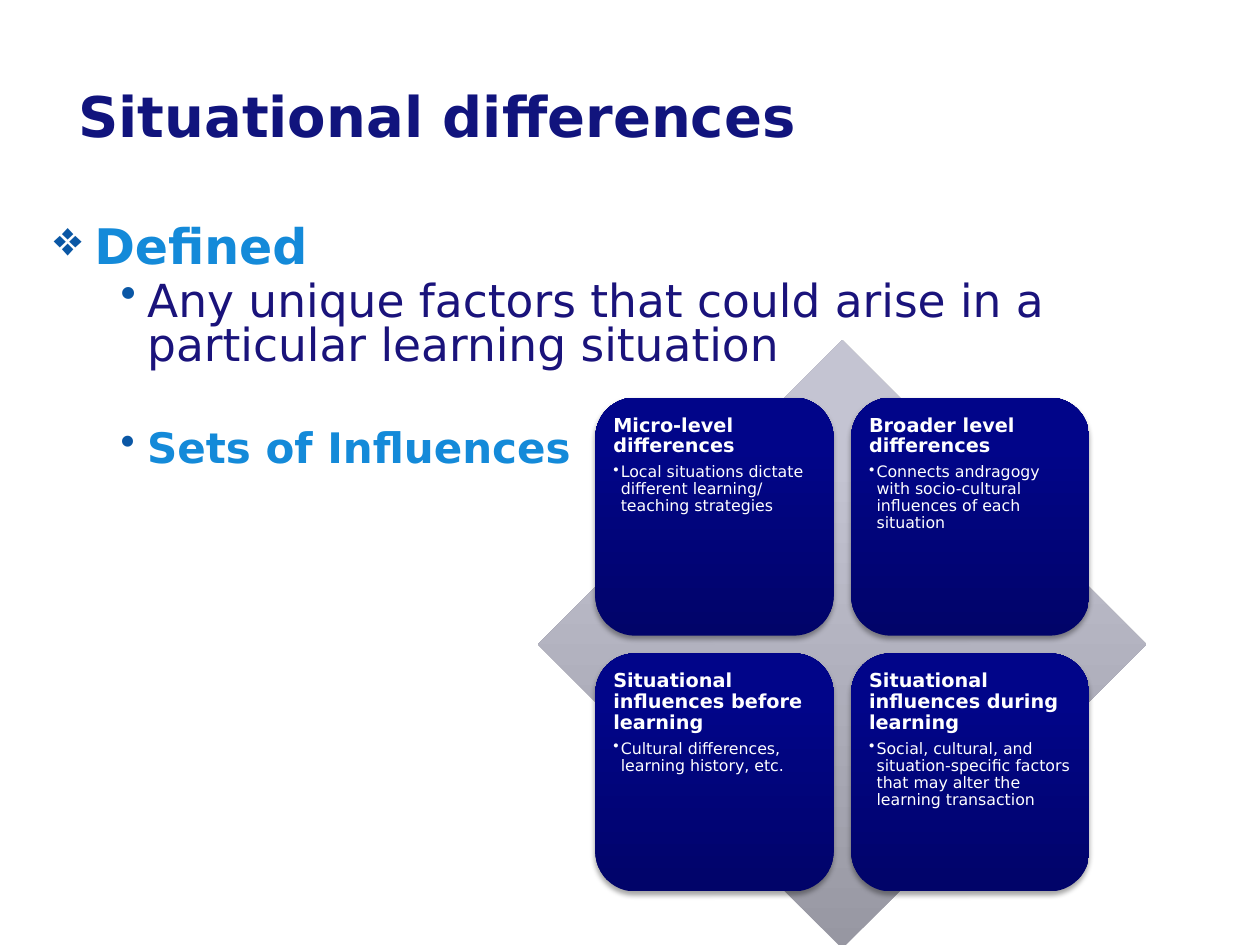
from copy import deepcopy
from lxml import etree
from pptx import Presentation
from pptx import util as u
from pptx.dml.color import RGBColor
from pptx.enum import shapes, text
from pptx.oxml.ns import qn

FONT = "DejaVu Sans"
NAVY, SKY, INDIGO, BULLET, WHITE = "11147D", "148AD9", "1A137B", "0A57A5", "FFFFFF"
DIAMOND_STOPS = [(0, "9797A2"), (0.8, "C4C4D2"), (1, "C5C5D3")]
CARD_STOPS = [(0, "010469"), (0.8, "010589"), (1, "00048A")]

TITLE = "Situational differences"
OUTLINE = [
    ("Defined", 28, SKY, True, "❖", 0.32, 0.32, 0),
    ("Any unique factors that could arise in a particular learning situation",
     26, INDIGO, False, "•", 0.74, 0.21, 5.2),
    ("Sets of Influences", 24, SKY, True, "•", 0.74, 0.21, 35),
]
INFLUENCES = [
    ("Micro-level differences",
     "Local situations dictate different learning/ teaching strategies"),
    ("Broader level differences",
     "Connects andragogy with socio-cultural influences of each situation"),
    ("Situational influences before learning",
     "Cultural differences, learning history, etc."),
    ("Situational influences during learning",
     "Social, cultural, and situation-specific factors that may alter the learning transaction"),
]

DIAMOND_LEFT, DIAMOND_TOP, DIAMOND = 4.27, 2.7, 4.83
CARD, GAP, COLUMNS = 1.89, 0.14, 2


def color(value):
    return RGBColor.from_string(value)


def style(paragraph, size, ink, bold):
    paragraph.alignment = text.PP_ALIGN.LEFT
    font = paragraph.font
    font.name, font.size, font.bold = FONT, u.Pt(size), bold
    font.color.rgb = color(ink)


def add_bullet(paragraph, mark, ink, indent, hanging):
    props = paragraph._p.get_or_add_pPr()
    props.set("marL", str(u.Inches(indent)))
    props.set("indent", str(-u.Inches(hanging)))
    tint = etree.SubElement(props, qn("a:buClr"))
    etree.SubElement(tint, qn("a:srgbClr"), val=ink)
    etree.SubElement(props, qn("a:buChar"), char=mark)


def add_box(left, top, width, height):
    frame = slide.shapes.add_textbox(*map(u.Inches, (left, top, width, height))).text_frame
    frame.word_wrap = True
    return frame


def add_shaded(kind, left, top, size, stops):
    shape = slide.shapes.add_shape(kind, *map(u.Inches, (left, top, size, size)))
    shape.shadow.inherit = False
    shape.line.fill.background()
    shape.fill.gradient()
    shape.fill.gradient_angle = 90
    stop_list = shape._element.spPr.find(".//" + qn("a:gsLst"))
    stop_list.append(deepcopy(stop_list[0]))
    for stop, (position, tone) in zip(shape.fill.gradient_stops, stops):
        stop.position = position
        stop.color.rgb = color(tone)
    return shape


def add_shadow(shape):
    effects = shape._element.spPr.find(qn("a:effectLst"))
    shadow = etree.SubElement(effects, qn("a:outerShdw"), blurRad=str(u.Pt(3.1)),
                              dist=str(u.Pt(1.8)), dir="5400000", rotWithShape="0")
    black = etree.SubElement(shadow, qn("a:srgbClr"), val="000000")
    etree.SubElement(black, qn("a:alpha"), val="35000")


deck = Presentation()
deck.slide_width, deck.slide_height = u.Inches(10), u.Inches(7.5)
slide = deck.slides.add_slide(deck.slide_layouts[6])

title = add_box(0.17, 0.33, 9.42, 1.17)
title.vertical_anchor = text.MSO_ANCHOR.MIDDLE
title.margin_left = u.Inches(0.45)
title.text = TITLE
style(title.paragraphs[0], 32, NAVY, True)

outline = add_box(0.33, 1.75, 9.17, 5.17)
outline.text = "\n".join(item[0] for item in OUTLINE)
for paragraph, (_, size, ink, bold, mark, indent, hanging, before) in zip(
        outline.paragraphs, OUTLINE):
    paragraph.line_spacing = 0.8
    paragraph.space_before = u.Pt(before)
    add_bullet(paragraph, mark, BULLET, indent, hanging)
    style(paragraph, size, ink, bold)

add_shaded(shapes.MSO_SHAPE.DIAMOND, DIAMOND_LEFT, DIAMOND_TOP, DIAMOND, DIAMOND_STOPS)
inset = (DIAMOND - COLUMNS * CARD - GAP) / 2
for index, (heading, detail) in enumerate(INFLUENCES):
    row, column = divmod(index, COLUMNS)
    card = add_shaded(shapes.MSO_SHAPE.ROUNDED_RECTANGLE,
                      DIAMOND_LEFT + inset + column * (CARD + GAP),
                      DIAMOND_TOP + inset + row * (CARD + GAP), CARD, CARD_STOPS)
    add_shadow(card)
    frame = card.text_frame
    frame.word_wrap = True
    frame.vertical_anchor = text.MSO_ANCHOR.TOP
    frame.margin_left = frame.margin_right = u.Inches(0.05)
    frame.margin_top = frame.margin_bottom = u.Inches(0.05)
    frame.text = f"{heading}\n{detail}"
    head, body = frame.paragraphs
    head.line_spacing = body.line_spacing = 0.9
    head.space_after = u.Pt(4)
    add_bullet(body, "•", WHITE, 0.06, 0.06)
    style(head, 11, WHITE, True)
    style(body, 9, WHITE, False)

deck.save("out.pptx")
